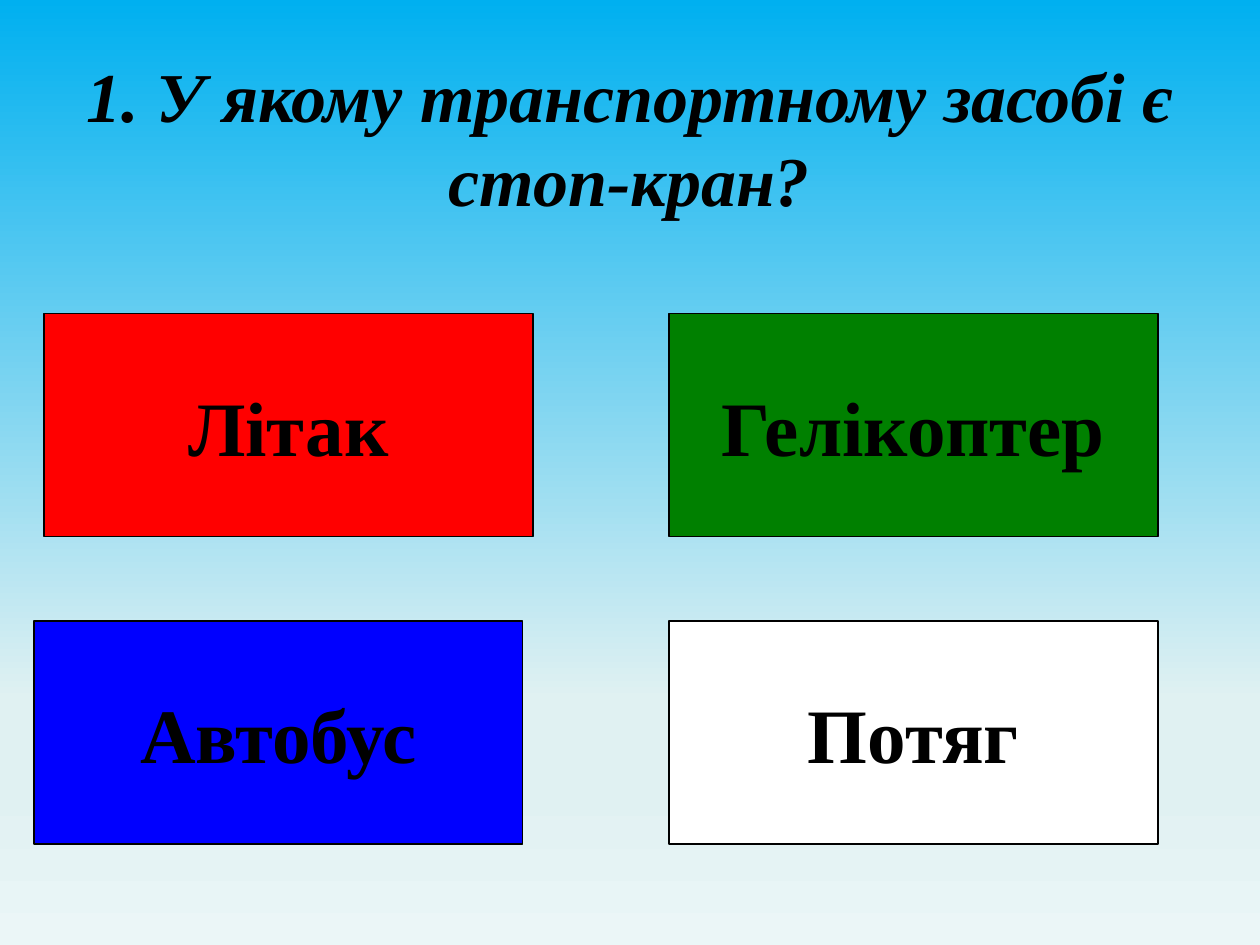
from lxml.etree import SubElement
from pptx import Presentation
from pptx.dml.color import RGBColor
from pptx.enum.shapes import MSO_SHAPE
from pptx.enum.text import MSO_ANCHOR, PP_ALIGN
from pptx.oxml.ns import qn
from pptx.util import Inches, Pt

FONT = "Times New Roman"
BLACK = RGBColor(0x00, 0x00, 0x00)
RED = RGBColor(0xFF, 0x00, 0x00)
GREEN = RGBColor(0x00, 0x80, 0x00)
BLUE = RGBColor(0x00, 0x00, 0xFF)
WHITE = RGBColor(0xFF, 0xFF, 0xFF)
SKY = RGBColor(0x00, 0xB0, 0xF0)
MIST = RGBColor(0xE0, 0xF1, 0xF2)
PALE = RGBColor(0xEB, 0xF6, 0xF7)
SKY_STOPS = [(0, SKY), (74, MIST), (83, MIST), (100, PALE)]

ANSWER_WIDTH, ANSWER_HEIGHT = 3.88, 1.77
TOP_ROW, BOTTOM_ROW = 2.49, 4.93
RIGHT_COLUMN = 5.31
ANSWERS = [
    ("Літак", RED, 0.35, TOP_ROW),
    ("Гелікоптер", GREEN, RIGHT_COLUMN, TOP_ROW),
    ("Автобус", BLUE, 0.27, BOTTOM_ROW),
    ("Потяг", WHITE, RIGHT_COLUMN, BOTTOM_ROW),
]


def paint_background(page):
    fill = page.background.fill
    fill.gradient()
    fill.gradient_angle = 270
    stops = page.element.find(".//" + qn("a:gsLst"))
    for stop in list(stops):
        stops.remove(stop)
    for percent, color in SKY_STOPS:
        stop = SubElement(stops, qn("a:gs"), pos=str(percent * 1000))
        SubElement(stop, qn("a:srgbClr"), val=str(color))


def write_text(box, text, size, wrap, italic=False):
    frame = box.text_frame
    frame.word_wrap = wrap
    frame.vertical_anchor = MSO_ANCHOR.MIDDLE
    para = frame.paragraphs[0]
    para.alignment = PP_ALIGN.CENTER
    span = para.add_run()
    span.text = text
    span.font.name = FONT
    span.font.size = Pt(size)
    span.font.bold = True
    span.font.italic = italic
    span.font.color.rgb = BLACK


def add_question(page, text):
    box = page.shapes.add_textbox(Inches(0.5), Inches(0.3), Inches(8.99), Inches(1.56))
    write_text(box, text, 40, wrap=True, italic=True)


def add_answer(page, text, color, left, top):
    box = page.shapes.add_shape(
        MSO_SHAPE.RECTANGLE,
        Inches(left), Inches(top), Inches(ANSWER_WIDTH), Inches(ANSWER_HEIGHT),
    )
    box.shadow.inherit = False
    box.fill.solid()
    box.fill.fore_color.rgb = color
    box.line.color.rgb = BLACK
    box.line.width = Pt(0.75)
    write_text(box, text, 44, wrap=False)


def main():
    deck = Presentation()
    deck.slide_width = Inches(10)
    deck.slide_height = Inches(7.5)
    page = deck.slides.add_slide(deck.slide_layouts[6])
    paint_background(page)
    add_question(page, "1. У якому транспортному засобі є стоп-кран?")
    for answer in ANSWERS:
        add_answer(page, *answer)
    deck.save("out.pptx")


if __name__ == "__main__":
    main()
